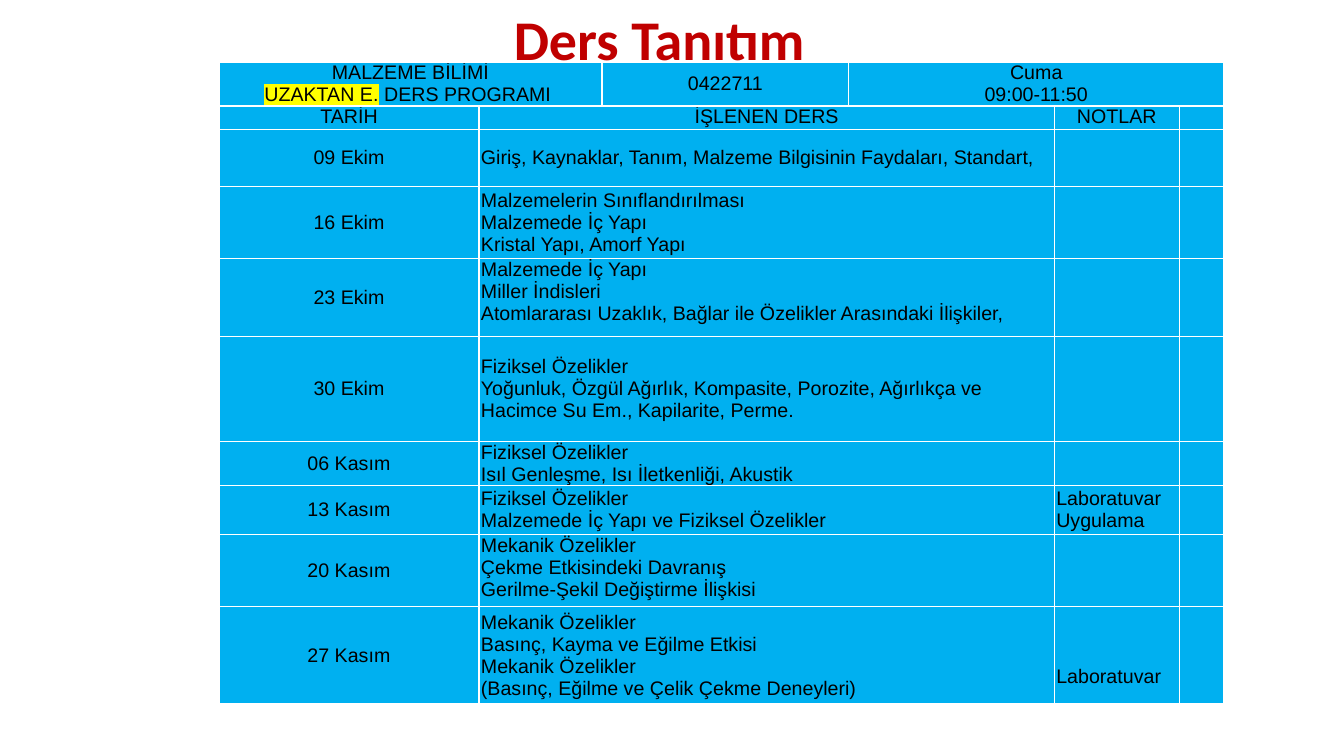
from lxml.etree import SubElement
from pptx import Presentation
from pptx.dml.color import RGBColor
from pptx.enum.text import MSO_ANCHOR as Anchor, PP_ALIGN as Align
from pptx.oxml.ns import qn
from pptx.util import Cm, Pt


def color(value):
    return RGBColor.from_string(value)


class CourseSlide:
    cell_fill = "00B0F0"
    border = "FFFFFF"
    text_color = "000000"
    title_color = "C00000"
    marker = "FFFF00"
    table_size = 14

    def __init__(self, presentation):
        self.slide = presentation.slides.add_slide(presentation.slide_layouts[6])

    def style_run(self, run, font, size, hex_color, bold=False):
        run.font.name = font
        run.font.size = Pt(size)
        run.font.bold = bold
        run.font.color.rgb = color(hex_color)

    def title(self, text, left, top, width, height):
        box = self.slide.shapes.add_textbox(Cm(left), Cm(top), Cm(width), Cm(height))
        frame = box.text_frame
        frame.word_wrap = True
        frame.vertical_anchor = Anchor.BOTTOM
        frame.text = text
        paragraph = frame.paragraphs[0]
        paragraph.alignment = Align.CENTER
        paragraph.line_spacing = 0.9
        self.style_run(paragraph.runs[0], "Calibri", 40, self.title_color, True)

    def table(self, left, top, widths, heights):
        frame = self.slide.shapes.add_table(
            len(heights), len(widths), Cm(left), Cm(top), Cm(sum(widths)), Cm(sum(heights)))
        table = frame.table
        table.first_row = table.horz_banding = False
        for column, width in zip(table.columns, widths):
            column.width = Cm(width)
        for row, height in zip(table.rows, heights):
            row.height = Cm(height)
        for cell in table.iter_cells():
            self.cell_style(cell)
        return table

    def cell_style(self, cell):
        cell.margin_left = cell.margin_right = Cm(0.05)
        cell.margin_top = cell.margin_bottom = Cm(0)
        properties = cell._tc.get_or_add_tcPr()
        for side in ("a:lnL", "a:lnR", "a:lnT", "a:lnB"):
            line = SubElement(properties, qn(side), w=str(Pt(1)))
            fill = SubElement(line, qn("a:solidFill"))
            SubElement(fill, qn("a:srgbClr"), val=self.border)
        cell.fill.solid()
        cell.fill.fore_color.rgb = color(self.cell_fill)
        paragraph = cell.text_frame.paragraphs[0]
        SubElement(paragraph._p, qn("a:endParaRPr"), sz=str(self.table_size * 100))

    def cell_text(self, cell, text, align=Align.CENTER, anchor=Anchor.MIDDLE):
        cell.text_frame.text = text
        cell.vertical_anchor = anchor
        for paragraph in cell.text_frame.paragraphs:
            paragraph.alignment = align
            for run in paragraph.runs:
                self.style_run(run, "Arial", self.table_size, self.text_color)

    def highlight_start(self, paragraph, start):
        run = paragraph.runs[0]
        rest = paragraph.add_run()
        rest.text = run.text[len(start):]
        run.text = start
        self.style_run(rest, "Arial", self.table_size, self.text_color)
        properties = run.font._element
        highlight = SubElement(properties, qn("a:highlight"))
        SubElement(highlight, qn("a:srgbClr"), val=self.marker)
        properties.find(qn("a:solidFill")).addnext(highlight)


WIDTHS = [6.55, 3.1, 6.22, 5.18, 3.15, 1.12]
HEIGHTS = [1.1, 0.56, 1.42, 1.83, 1.96, 2.64, 1.12, 1.22, 1.83, 2.44]
LESSONS = [
    ("09 Ekim", "Giriş, Kaynaklar, Tanım, Malzeme Bilgisinin Faydaları, Standart,", Anchor.MIDDLE),
    ("16 Ekim", "Malzemelerin Sınıflandırılması\nMalzemede İç Yapı\nKristal Yapı, Amorf Yapı",
     Anchor.MIDDLE),
    ("23 Ekim", "Malzemede İç Yapı\nMiller İndisleri\n"
     "Atomlararası Uzaklık, Bağlar ile Özelikler Arasındaki İlişkiler,", Anchor.TOP),
    ("30 Ekim", "Fiziksel Özelikler\nYoğunluk, Özgül Ağırlık, Kompasite, Porozite, "
     "Ağırlıkça ve Hacimce Su Em., Kapilarite, Perme.", Anchor.MIDDLE),
    ("06 Kasım", "Fiziksel Özelikler\nIsıl Genleşme, Isı İletkenliği, Akustik", Anchor.MIDDLE),
    ("13 Kasım", "Fiziksel Özelikler\nMalzemede İç Yapı ve Fiziksel Özelikler", Anchor.MIDDLE),
    ("20 Kasım", "Mekanik Özelikler\nÇekme Etkisindeki Davranış\n"
     "Gerilme-Şekil Değiştirme İlişkisi", Anchor.TOP),
    ("27 Kasım", "Mekanik Özelikler\nBasınç, Kayma ve Eğilme Etkisi\nMekanik Özelikler\n"
     "(Basınç, Eğilme ve Çelik Çekme Deneyleri)", Anchor.MIDDLE),
]


def main():
    presentation = Presentation()
    presentation.slide_width = Cm(33.87)
    presentation.slide_height = Cm(19.05)
    course = CourseSlide(presentation)

    table = course.table(5.52, 1.56, WIDTHS, HEIGHTS)
    table.cell(0, 0).merge(table.cell(0, 1))
    table.cell(0, 3).merge(table.cell(0, 5))
    for row in range(1, len(HEIGHTS)):
        table.cell(row, 1).merge(table.cell(row, 3))

    heading = table.cell(0, 0)
    course.cell_text(heading, "MALZEME BİLİMİ\nUZAKTAN E. DERS PROGRAMI ", anchor=Anchor.TOP)
    course.highlight_start(heading.text_frame.paragraphs[1], "UZAKTAN E.")
    course.cell_text(table.cell(0, 2), "0422711")
    course.cell_text(table.cell(0, 3), "Cuma\n09:00-11:50")
    for column, label in ((0, "TARİH"), (1, "İŞLENEN DERS"), (4, "NOTLAR")):
        course.cell_text(table.cell(1, column), label, anchor=Anchor.TOP)

    for row, (date, topics, anchor) in enumerate(LESSONS, start=2):
        course.cell_text(table.cell(row, 0), date)
        course.cell_text(table.cell(row, 1), topics, Align.LEFT, anchor)
    course.cell_text(table.cell(7, 4), "Laboratuvar Uygulama", Align.LEFT)
    last_note = table.cell(9, 4)
    course.cell_text(last_note, "Laboratuvar", Align.LEFT, Anchor.BOTTOM)
    last_note.margin_bottom = Cm(0.4)

    course.title("Ders Tanıtım", 3.91, 0, 25.4, 1.96)
    presentation.save("out.pptx")


if __name__ == "__main__":
    main()
